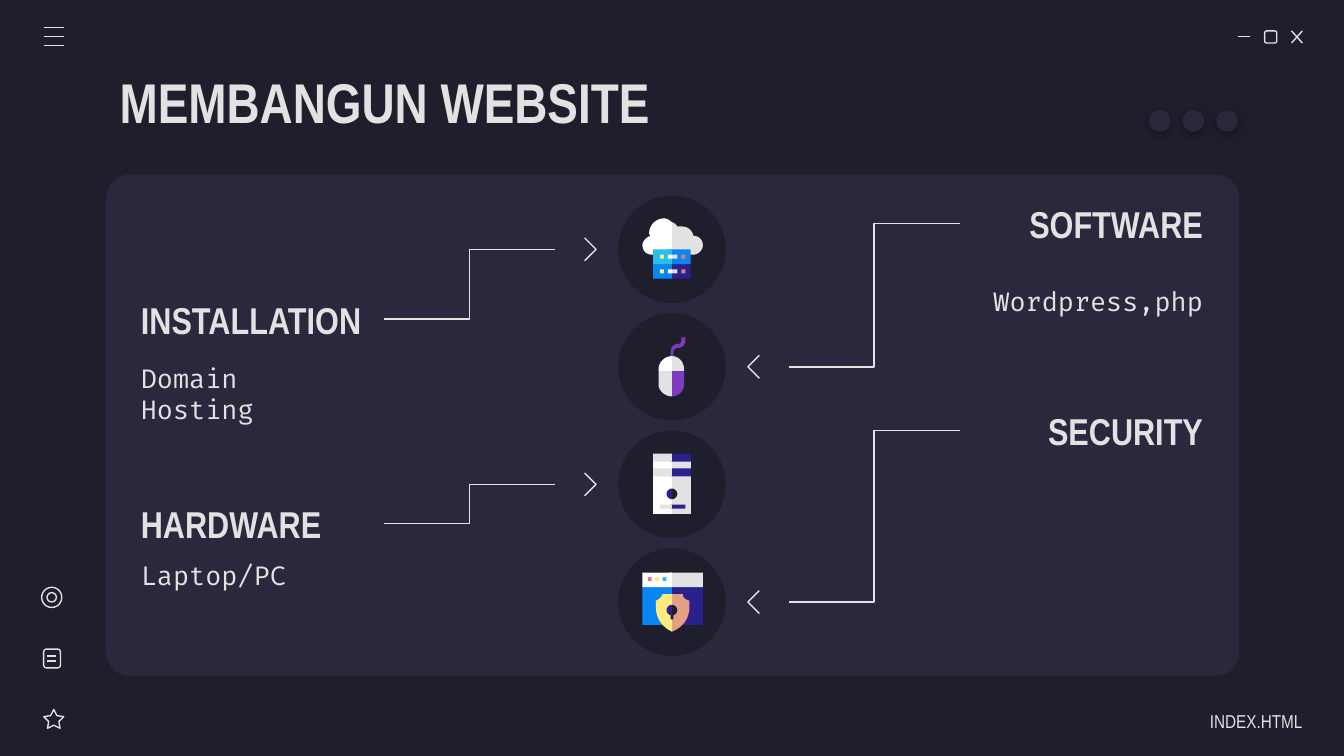
from lxml.etree import SubElement
from pptx import Presentation
from pptx.dml.color import RGBColor as RGB
from pptx.enum.shapes import MSO_CONNECTOR as LINK, MSO_SHAPE as SHAPE
from pptx.enum.text import MSO_ANCHOR as ANCHOR, MSO_AUTO_SIZE as FIT, PP_ALIGN as ALIGN
from pptx.oxml.ns import qn
from pptx.util import Inches, Pt

COLS, ROWS = 100, 56.25  # grid of cells, a tenth of an inch each
MID = COLS / 2
DARK, PANEL, LIGHT, WHITE = "1E1E2C", "29283D", "E2E2E2", "FFFFFF"
NAVY, BLUE, CYAN = "2B218D", "0887F2", "24BFEB"
PINK, GOLD, TAN, PLUM = "E07A88", "FFEA7D", "E5A083", "7E3BBE"
HEAD, BODY = "Arial Narrow", "Fira Code"


def cell(n):
    return Inches(n / 10)


def tint(code):
    return RGB.from_string(code)


def bend(parts, steps=8):
    """Turn points and six-number curves into a list of points."""
    pts = []
    for part in parts:
        if len(part) == 2:
            pts.append(part)
            continue
        a, (b, c, d) = pts[-1], (part[:2], part[2:4], part[4:])
        for i in range(1, steps + 1):
            t = i / steps
            u = 1 - t
            pts.append(tuple(u**3 * a[k] + 3 * u * u * t * b[k] + 3 * u * t * t * c[k]
                             + t**3 * d[k] for k in (0, 1)))
    return pts


class Deck:
    def __init__(self):
        self.show = Presentation()
        self.show.slide_width, self.show.slide_height = cell(COLS), cell(ROWS)
        self.slide = self.show.slides.add_slide(self.show.slide_layouts[5])
        self.slide.background.fill.solid()
        self.slide.background.fill.fore_color.rgb = tint(DARK)
        self.pen = self.slide.shapes

    def group(self):
        self.pen = self.slide.shapes.add_group_shape().shapes

    def ungroup(self):
        self.pen = self.slide.shapes

    def paint(self, item, fill):
        """Fill the item, or outline it when there is no fill."""
        item.shadow.inherit = False
        if fill:
            item.fill.solid()
            item.fill.fore_color.rgb = tint(fill)
            item.line.fill.background()
        else:
            item.fill.background()
            self.stroke(item)
        return item

    def stroke(self, item):
        item.line.color.rgb = tint(LIGHT)
        item.line.width = Pt(0.75)

    def shape(self, kind, x, y, w, h, fill=None, adj=None):
        item = self.pen.add_shape(kind, cell(x), cell(y), cell(w), cell(h))
        if adj is not None:
            item.adjustments[0] = adj
        return self.paint(item, fill)

    def outline(self, parts, fill=None):
        pts = [(cell(x), cell(y)) for x, y in bend(parts)]
        form = self.pen.build_freeform(*pts[0], scale=1.0)
        form.add_line_segments(pts[1:], close=bool(fill))
        return self.paint(form.convert_to_shape(), fill)

    def link(self, x1, y1, x2, y2, kind=LINK.STRAIGHT):
        item = self.pen.add_connector(kind, cell(x1), cell(y1), cell(x2), cell(y2))
        self.stroke(item)
        SubElement(item._element.spPr, qn("a:effectLst"))

    def label(self, box, text, size, font=HEAD, bold=False, align=ALIGN.LEFT, space=None, right=1):
        frame = box.text_frame
        frame.word_wrap, frame.auto_size = True, FIT.NONE
        frame.vertical_anchor = ANCHOR.MIDDLE
        frame.margin_left = frame.margin_top = frame.margin_bottom = cell(1)
        frame.margin_right = cell(right)
        frame.text = text
        for para in frame.paragraphs:
            para.alignment, para.line_spacing = align, space
            for run in para.runs:
                run.font.name, run.font.size, run.font.bold = font, Pt(size), bold
                run.font.color.rgb = tint(LIGHT)

    def text(self, x, y, w, h, *words, **style):
        box = self.pen.add_textbox(cell(x), cell(y), cell(w), cell(h))
        self.label(box, *words, **style)

    def title(self, x, y, w, h, text):
        box = self.slide.shapes.title
        box.left, box.top, box.width, box.height = map(cell, (x, y, w, h))
        self.label(box, text, 30, bold=True)

    def dot(self, x, y, d):
        item = self.shape(SHAPE.OVAL, x, y, d, d, PANEL)
        fx = item._element.spPr.find(qn("a:effectLst"))
        cast = SubElement(fx, qn("a:outerShdw"), blurRad=str(Pt(4.5)), dist=str(Pt(1.5)),
                          dir="5400000", algn="bl", rotWithShape="0")
        tone = SubElement(cast, qn("a:srgbClr"), val="000000")
        SubElement(tone, qn("a:alpha"), val="30000")

    def icon(self, y, art):
        """Draw art given in tenths of a cell around the middle of a disc."""
        self.group()
        for fill, parts in art:
            if isinstance(parts, tuple):
                l, t, r, b = (n / 10 for n in parts)
                self.shape(SHAPE.RECTANGLE, MID + l, y + t, r - l, b - t, fill)
            else:
                self.outline([tuple(n / 10 + (y if i % 2 else MID) for i, n in enumerate(part))
                              for part in parts], fill)
        self.ungroup()


def split(top, low, right, left, wide, back=2):
    """Two rectangles that meet at the middle."""
    return [(right, (-back, top, wide, low)), (left, (-14 if wide == 14 else -22, top, 0, low))]


def hole(y):
    half = lambda s: [(0, y - 4), (2 * s, y - 4, 4 * s, y - 2, 4 * s, y),
                      (4 * s, y + 2, 2 * s, y + 4, 0, y + 4)]
    return [(DARK, half(1)), (NAVY, half(-1))]


# Icon art
cloud = [
    (LIGHT, [(0, -20), (-2, -7), (0, 4), (16, 4), (19, 4, 23, 1, 23, -3), (23, -7, 20, -10, 16, -10),
             (15, -14, 12, -17, 7, -17), (6, -17, 5, -17, 4, -17), (3, -18, 2, -20, 0, -20)]),
    (WHITE, [(-6, -23), (-12, -23, -17, -18, -17, -12), (-17, -11, -16, -10, -16, -10),
             (-19, -9, -22, -6, -22, -3), (-22, 1, -19, 4, -15, 4), (0, 4), (0, -20),
             (-2, -22, -4, -23, -6, -23)]),
    *split(9, 22, NAVY, BLUE, 14), *split(0, 11, BLUE, CYAN, 14),
    *[(fill, (l, t, r, t + 3)) for fill, l, r in
      ((PINK, 7, 10), (GOLD, -9, -6), (LIGHT, -1, 4), (WHITE, -3, 0)) for t in (15, 4)]]
mouse = [
    (PLUM, [(7, -22), (7, -20), (7, -18, 6, -17, 4, -17), (1, -17, -1, -14, -1, -11), (-1, -5), (1, -5),
            (1, -11), (1, -12, 2, -14, 4, -14), (7, -14, 10, -16, 10, -20), (10, -22)]),
    (PLUM, [(-2, 2), (0, 22), (5, 22, 9, 18, 9, 13), (9, 3)]),
    (LIGHT, [(0, 2), (-10, 3), (-10, 13), (-10, 18, -5, 22, 0, 22)]),
    (LIGHT, [(0, -8), (-2, -2), (0, 3), (9, 3), (9, 2), (9, -4, 5, -8, 0, -8)]),
    (WHITE, [(0, -8), (-5, -8, -10, -4, -10, 2), (-10, 3), (0, 3)])]
tower = [
    *split(-8, 22, LIGHT, WHITE, 14, 1), *split(-14, -6, NAVY, LIGHT, 14, 1),
    *split(-19, -12, LIGHT, WHITE, 14, 1), *hole(7),
    (NAVY, (-1, 15, 10, 18)), (LIGHT, (-9, 15, 0, 18)), *split(-23, -17, NAVY, LIGHT, 14, 1)]
shield = [
    *split(-13, 17, NAVY, BLUE, 23), *split(-22, -11, LIGHT, WHITE, 23),
    *[(fill, (l, -18.5, l + 3, -15.5)) for fill, l in ((PINK, -18), (GOLD, -12.5), (CYAN, -7))],
    (TAN, [(0, -6), (-2, 10), (0, 22), (8, 19, 13, 12, 13, 4), (13, -1), (10, -2, 8, -3, 8, -6)]),
    (GOLD, [(-7, -6), (-8, -3, -10, -2, -12, -1), (-12, 4), (-12, 12, -7, 19, 0, 22), (0, -6)]),
    (DARK, (-1, 8, 1, 13)), *hole(6)]

# Topics: side, heading, its row, details, their row, icon
topics = [(-1, "INSTALLATION", 21.6, "Domain\nHosting", 25.7, cloud),
          (1, "SOFTWARE", 14.5, "Wordpress,php", 18.8, mouse),
          (-1, "HARDWARE", 36.8, "Laptop/PC", 39.2, tower),
          (1, "SECURITY", 29.9, None, None, shield)]


def main():
    deck = Deck()
    deck.shape(SHAPE.ROUNDED_RECTANGLE, 7.9, 13, 84.3, 37.3, PANEL, 0.047)
    deck.title(7.9, 4.4, 78.8, 6.3, "MEMBANGUN WEBSITE")

    # Window buttons
    deck.group()
    deck.link(92.1, 2.7, 93, 2.7)
    deck.shape(SHAPE.ROUNDED_RECTANGLE, 94.1, 2.3, 0.9, 0.9)
    deck.link(96.1, 2.3, 96.9, 3.2)
    deck.link(96.9, 2.3, 96.1, 3.2)

    # Menu
    deck.group()
    for y in (2.05, 2.72, 3.39):
        deck.link(3.25, y, 4.75, y)

    # Side icons
    deck.group()
    deck.shape(SHAPE.STAR_5_POINT, 3.25, 52.8, 1.5, 1.4, adj=0.254)
    deck.shape(SHAPE.ROUNDED_RECTANGLE, 3.25, 48.3, 1.25, 1.4)
    for y in (48.8, 49.2):
        deck.link(3.5, y, 4.2, y)
    for x, y, d in ((3.1, 43.7, 1.5), (3.5, 44.1, 0.7)):
        deck.shape(SHAPE.OVAL, x, y, d, d)

    # Topics, each tied to a disc in the middle column
    deck.ungroup()
    for i, (side, head, top, body, low, art) in enumerate(topics):
        y = 18.55 + 8.75 * i
        x = 9.5 if side < 0 else 71.4
        align = ALIGN.LEFT if side < 0 else ALIGN.RIGHT
        deck.shape(SHAPE.OVAL, MID - 4, y - 4, 8, 8, DARK)
        deck.icon(y, art)
        deck.text(x, top, 19.1, 4.3, head, 20, bold=True, align=align)
        if body:
            deck.text(x, low, 19.1, 7.2, body, 14, font=BODY, align=align)
        deck.link(MID + 21.4 * side, top + 2.15, MID + 8.7 * side, y, LINK.ELBOW)
        deck.outline([(MID + a * side, y + b) for a, b in ((6.5, -0.85), (5.65, 0), (6.5, 0.85))])

    # Dots and page name
    deck.group()
    for i in range(3):
        deck.dot(90.5 - 2.5 * i, 8.2, 1.6)
    deck.ungroup()
    deck.text(85.2, 52, 11.7, 3, "INDEX.HTML", 10, align=ALIGN.RIGHT, space=1.15, right=0)
    deck.show.save("out.pptx")


if __name__ == "__main__":
    main()
